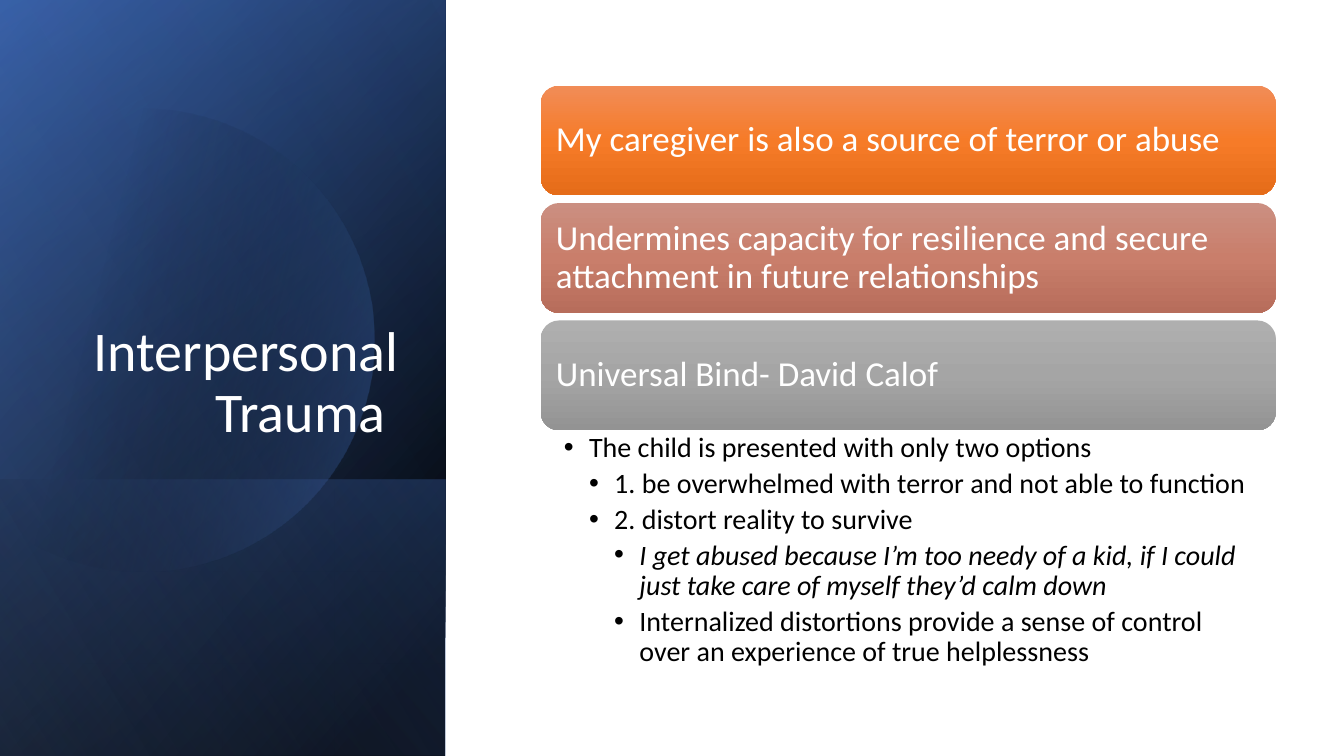
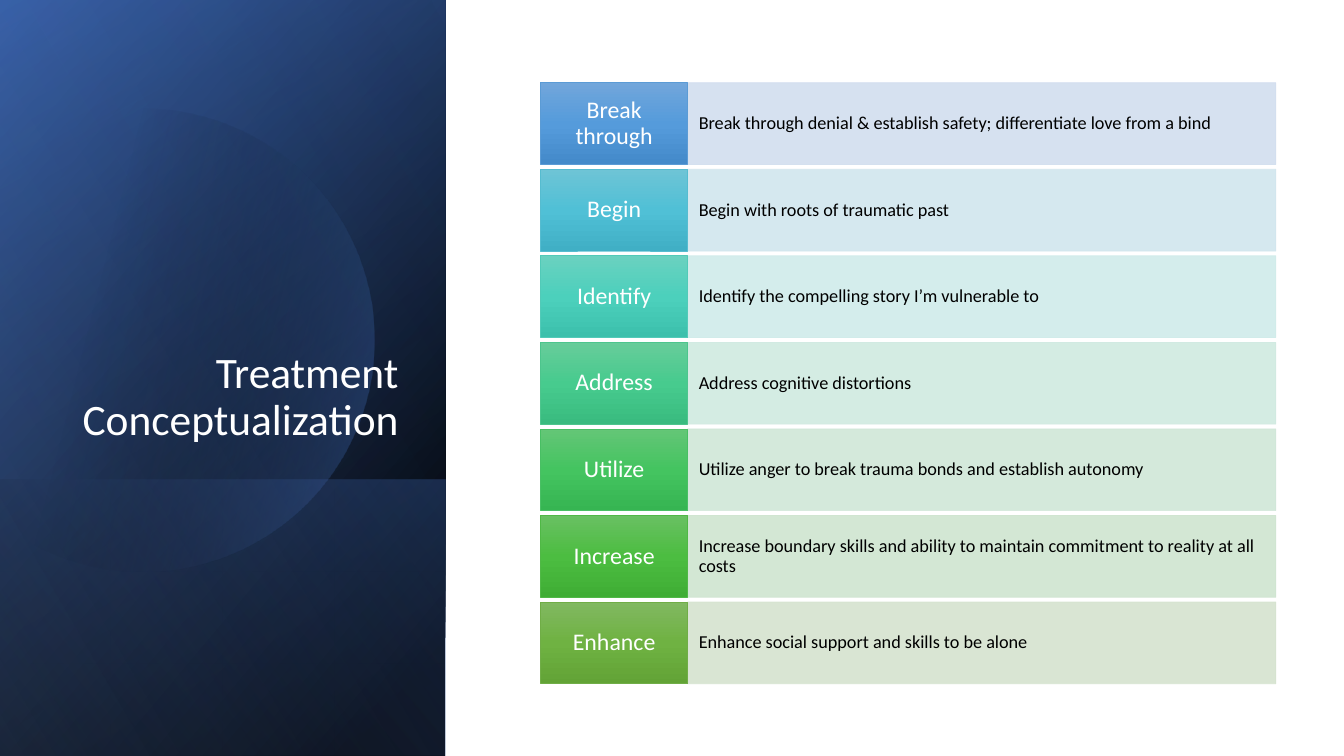
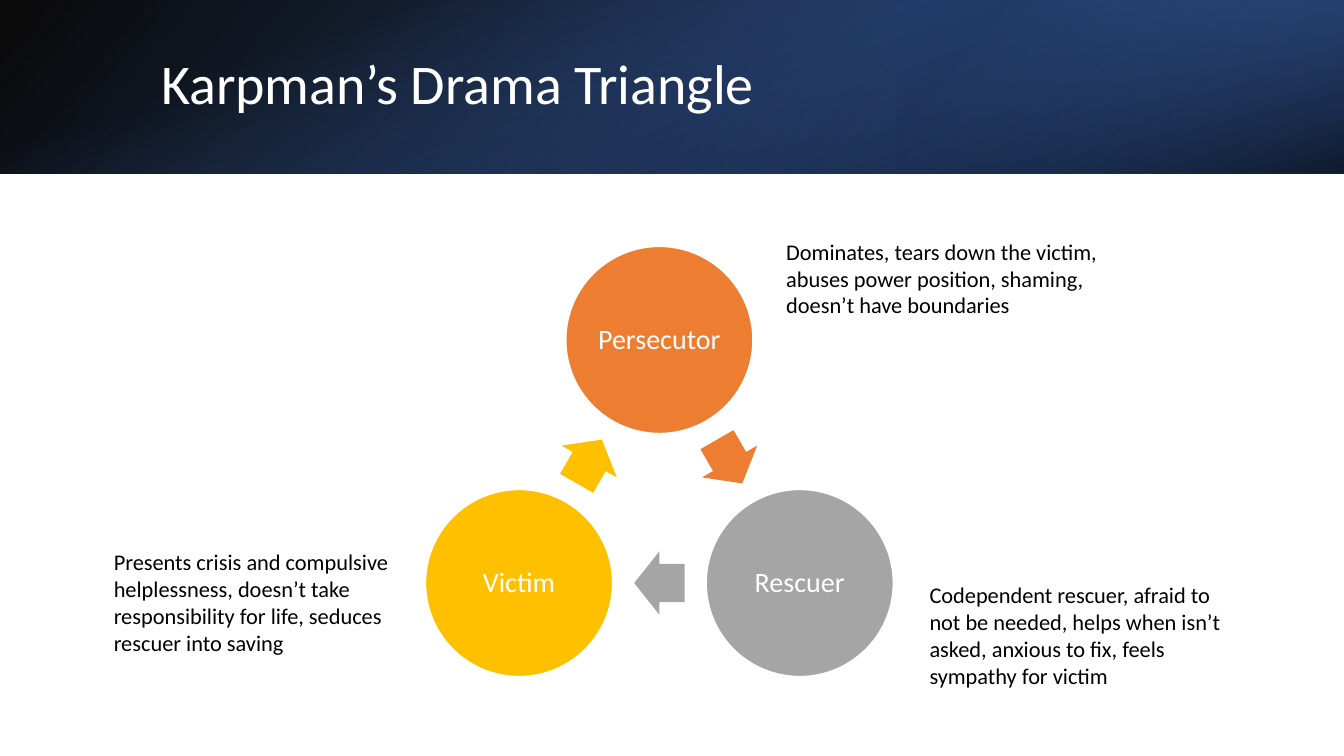
from dataclasses import dataclass
from math import acos, cos, radians, sin, sqrt

from lxml.etree import SubElement
from pptx import Presentation
from pptx.dml.color import RGBColor
from pptx.enum.shapes import MSO_SHAPE
from pptx.enum.text import MSO_ANCHOR, PP_ALIGN
from pptx.oxml.ns import qn
from pptx.util import Inches, Pt


@dataclass(frozen=True)
class Theme:
    font: str = "Calibri"
    black: str = "000000"
    white: str = "FFFFFF"
    blue: str = "4472C4"
    deep_blue: str = "2F5597"
    navy: str = "203864"
    pale_blue: str = "8FAADC"
    orange: str = "ED7D31"
    grey: str = "A5A5A5"
    gold: str = "FFC000"
    title: int = 40
    long_title: int = 31
    card: int = 25
    body: int = 20
    label: int = 17
    note: int = 16
    row: int = 13


@dataclass(frozen=True)
class Box:
    left: float
    top: float
    width: float
    height: float

    def inner(self, left, top, width, height):
        """Return an inner box given in percent of this one."""
        return Box(self.left + self.width * left / 100, self.top + self.height * top / 100,
                   self.width * width / 100, self.height * height / 100)

    def inches(self):
        return [Inches(n) for n in (self.left, self.top, self.width, self.height)]


THEME = Theme()
PAGE = Box(0, 0, 13.33, 7.5)
SIDE_PANEL = PAGE.inner(0, 0, 33.15, 100)
HEADER = PAGE.inner(0, 0, 100, 22.93)
WHOLE = (0, 0, 100, 100)

# Overlays: place in percent, rotation, flip, angle, stops (position, colour, opacity)
SIDE_LAYERS = [
    (WHOLE, 90, True, 50, [(8, THEME.black, 100), (100, THEME.deep_blue, 100)]),
    (WHOLE, 90, True, 30, [(0, THEME.black, 0), (99, THEME.blue, 46)]),
    ((0, 63.47, 100, 36.53), 90, True, 130, [(2, THEME.blue, 29), (100, THEME.black, 30)]),
]
SIDE_DISC = (14, [(29, THEME.black, 0), (100, THEME.blue, 43)])
SIDE_SHEEN = [(WHOLE, 90, True, 120, [(0, THEME.black, 0), (99, THEME.pale_blue, 11)])]
HEADER_LAYERS = [
    (WHOLE, 0, True, 140, [(0, THEME.black, 96), (100, THEME.deep_blue, 100)]),
    ((66.7, 0, 33.3, 100), 180, True, 320, [(19, THEME.navy, 68), (100, THEME.blue, 79)]),
    (WHOLE, 90, False, 340, [(23, THEME.blue, 0), (99, THEME.black, 74)]),
]

CARDS = [
    ("My caregiver is also a source of terror or abuse", ("F18C57", "F67B28", "E56C19")),
    ("Undermines capacity for resilience and secure attachment in future relationships",
     ("CB8F81", "C97E6B", "B76D5B")),
    ("Universal Bind- David Calof", ("AFAFAF", "A5A5A5", "939393")),
]
# Level, text, italic
BULLETS = [
    (1, "The child is presented with only two options", False),
    (2, "1. be overwhelmed with terror and not able to function", False),
    (2, "2. distort reality to survive", False),
    (3, "I get abused because I’m too needy of a kid, if I could just take care of myself "
        "they’d calm down", True),
    (3, "Internalized distortions provide a sense of control over an experience of true "
        "helplessness", False),
]
# Label, sentence, tint, edge, label gradient
STEPS = [
    ("Break through", "Break through denial & establish safety; differentiate love from a bind",
     "D2DEEF", "5B9BD5", ("71A6DB", "559BDB", "448ACA")),
    ("Begin", "Begin with roots of traumatic past",
     "D1E6EE", "56BCD0", ("6EC4D6", "50C0D6", "40AFC5")),
    ("Identify", "Identify the compelling story I’m vulnerable to",
     "D0ECEA", "52CAB8", ("6AD1C0", "4CD0BC", "3CC0AC")),
    ("Address", "Address cognitive distortions",
     "D0EAE1", "4DC58D", ("67CC9A", "47CB8E", "39BB7F")),
    ("Utilize", "Utilize anger to break trauma bonds and establish autonomy",
     "D0E7D8", "49BF64", ("64C677", "44C460", "36B552")),
    ("Increase", "Increase boundary skills and ability to maintain commitment to reality "
     "at all costs", "CFE5D0", "50B846", ("69C062", "4CBD41", "3FAD34")),
    ("Enhance", "Enhance social support and skills to be alone",
     "D5E3CF", "70AD47", ("81B861", "6FB242", "62A336")),
]
ROLES = [("Persecutor", THEME.orange), ("Rescuer", THEME.grey), ("Victim", THEME.gold)]
ROLE_NOTES = [
    ((57.76, 30.8, 25.96, 12.13),
     "Dominates, tears down the victim, abuses power position, shaming, "
     "doesn’t have boundaries"),
    ((68.42, 76.27, 24.08, 15.73),
     "Codependent rescuer, afraid to not be needed, helps when isn’t asked, "
     "anxious to fix, feels sympathy for victim"),
    ((7.73, 71.87, 22.28, 15.73),
     "Presents crisis and compulsive helplessness, doesn’t take responsibility for life, "
     "seduces rescuer into saving"),
]


# Fills and shapes
def set_alpha(fill, opacity):
    colour = fill._xPr.find(qn("a:solidFill"))[0]
    SubElement(colour, qn("a:alpha"), val=str(opacity * 1000))


def set_solid(fill, colour, opacity=100):
    fill.solid()
    fill.fore_color.rgb = RGBColor.from_string(colour)
    if opacity < 100:
        set_alpha(fill, opacity)


def set_gradient(shape, angle, stops):
    shape.fill.gradient()
    gradient = shape._element.spPr.find(qn("a:gradFill"))
    for child in list(gradient):
        gradient.remove(child)
    gradient.set("rotWithShape", "1")
    stop_list = SubElement(gradient, qn("a:gsLst"))
    for position, colour, opacity in stops:
        stop = SubElement(stop_list, qn("a:gs"), pos=str(position * 1000))
        value = SubElement(stop, qn("a:srgbClr"), val=colour)
        if opacity < 100:
            SubElement(value, qn("a:alpha"), val=str(opacity * 1000))
    SubElement(gradient, qn("a:lin"), ang=str(angle * 60000), scaled="0")


def set_glossy(shape, colours):
    set_gradient(shape, 90, [(n * 50, colour, 100) for n, colour in enumerate(colours)])


def set_line(shape, colour, width, opacity=100):
    set_solid(shape.line.fill, colour, opacity)
    shape.line.width = Pt(width)


def add_plain_shape(slide, kind, box):
    shape = slide.shapes.add_shape(kind, *box.inches())
    shape.shadow.inherit = False
    shape.line.fill.background()
    return shape


# Text
def set_frame(shape, anchor, insets):
    frame = shape.text_frame
    names = ("margin_left", "margin_top", "margin_right", "margin_bottom")
    settings = {name: Inches(inset) for name, inset in zip(names, insets)}
    for name, value in (settings | {"word_wrap": True, "vertical_anchor": anchor}).items():
        setattr(frame, name, value)
    return frame


def write(paragraph, text, size, colour, align=PP_ALIGN.LEFT, spacing=0.9, italic=False):
    paragraph.alignment = align
    paragraph.line_spacing = spacing
    run = paragraph.add_run()
    run.text = text
    font_format = {"name": THEME.font, "size": Pt(size), "italic": italic}
    for name, value in font_format.items():
        setattr(run.font, name, value)
    run.font.color.rgb = RGBColor.from_string(colour)


def fill_text(shape, text, size, colour, anchor=MSO_ANCHOR.MIDDLE,
              insets=(0.1, 0.05, 0.1, 0.05), **layout):
    frame = set_frame(shape, anchor, insets)
    write(frame.paragraphs[0], text, size, colour, **layout)


def add_text(slide, box, *content, **layout):
    fill_text(slide.shapes.add_textbox(*box.inches()), *content, **layout)


# Title regions
def add_layers(slide, region, layers):
    for place, rotation, flipped, angle, stops in layers:
        box = region.inner(*place)
        if rotation == 90:
            box = Box(box.left + (box.width - box.height) / 2,
                      box.top + (box.height - box.width) / 2, box.height, box.width)
        layer = add_plain_shape(slide, MSO_SHAPE.RECTANGLE, box)
        layer.rotation = rotation
        if flipped:
            layer._element.spPr.xfrm.set("flipH", "1")
        set_gradient(layer, angle, stops)


def add_cut_disc(slide, region):
    """Draw a disc that the left edge of the region cuts off."""
    radius = region.width * 0.52
    offset = region.width * 0.32
    middle = region.top + region.height * 0.45
    limit = acos(-offset / radius)
    steps = 120
    angles = [limit * (2 * n / steps - 1) for n in range(steps + 1)]
    points = [(Inches(region.left + offset + radius * cos(angle)),
               Inches(middle + radius * sin(angle))) for angle in angles]
    builder = slide.shapes.build_freeform(*points[0])
    builder.add_line_segments(points[1:], close=True)
    disc = builder.convert_to_shape()
    disc.shadow.inherit = False
    disc.line.fill.background()
    set_gradient(disc, *SIDE_DISC)


def add_side_title(slide, region, title, size):
    add_layers(slide, region, SIDE_LAYERS)
    add_cut_disc(slide, region)
    add_layers(slide, region, SIDE_SHEEN)
    add_text(slide, region.inner(14.48, 24.53, 77.15, 34.93), title, size, THEME.white,
             anchor=MSO_ANCHOR.BOTTOM, align=PP_ALIGN.RIGHT)


def add_header_title(slide, region, title):
    add_layers(slide, region, HEADER_LAYERS)
    add_text(slide, region.inner(11.25, 22.09, 82.37, 55.8), title, THEME.title, THEME.white)


# Content regions
def add_cards(slide, region):
    for number, (text, colours) in enumerate(CARDS):
        place = region.inner(0, number * 19.71, 100, 18.44)
        card = add_plain_shape(slide, MSO_SHAPE.ROUNDED_RECTANGLE, place)
        set_glossy(card, colours)
        fill_text(card, text, THEME.card, THEME.white, insets=(0.1,) * 4)


def add_bullets(slide, region):
    text_box = slide.shapes.add_textbox(*region.inches())
    frame = set_frame(text_box, MSO_ANCHOR.TOP, (0.23, 0.03, 0.19, 0.03))
    for number, (level, text, italic) in enumerate(BULLETS):
        paragraph = frame.add_paragraph() if number else frame.paragraphs[0]
        write(paragraph, text, THEME.body, THEME.black, italic=italic)
        paragraph.level = level
        paragraph.space_after = Pt(4)
        properties = paragraph._p.get_or_add_pPr()
        properties.set("marL", str(Inches(level * 0.25)))
        properties.set("indent", str(Inches(-0.25)))
        SubElement(properties, qn("a:buFont"), typeface="Arial")
        SubElement(properties, qn("a:buChar"), char="•")


def add_step_rows(slide, region):
    pitch = 14.4
    height = 100 - pitch * (len(STEPS) - 1)
    for number, (label, sentence, tint, edge, colours) in enumerate(STEPS):
        top = number * pitch
        row = add_plain_shape(slide, MSO_SHAPE.RECTANGLE, region.inner(20, top, 80, height))
        set_solid(row.fill, tint, 90)
        set_line(row, tint, 0.5, 90)
        fill_text(row, sentence, THEME.row, THEME.black, insets=(0.11, 0.21, 0.11, 0.21))
        tag = add_plain_shape(slide, MSO_SHAPE.RECTANGLE, region.inner(0, top, 20, height))
        set_glossy(tag, colours)
        set_line(tag, edge, 0.5)
        fill_text(tag, label, THEME.label, THEME.white, insets=(0.08,) * 4,
                  align=PP_ALIGN.CENTER)


def add_role_cycle(slide, region):
    diameter = region.width * 0.4
    orbit = (region.width - diameter) / sqrt(3)
    arrow_width, arrow_height = diameter * 0.27, diameter * 0.34
    centre_x = region.left + region.width / 2
    centre_y = region.top + diameter / 2 + orbit

    def around(degrees, distance, width, height):
        angle = radians(degrees)
        return Box(centre_x + distance * cos(angle) - width / 2,
                   centre_y + distance * sin(angle) - height / 2, width, height)

    for number, (role, colour) in enumerate(ROLES):
        turn = 120 * number
        circle = add_plain_shape(slide, MSO_SHAPE.OVAL,
                                 around(turn - 90, orbit, diameter, diameter))
        set_solid(circle.fill, colour)
        set_line(circle, THEME.white, 1)
        fill_text(circle, role, THEME.body, THEME.white, insets=(0.03,) * 4,
                  align=PP_ALIGN.CENTER)
        arrow = add_plain_shape(slide, MSO_SHAPE.RIGHT_ARROW,
                                around(turn - 30, orbit / 2, arrow_width, arrow_height))
        arrow.adjustments[0], arrow.adjustments[1] = 0.6, 0.5
        arrow.rotation = turn + 60
        set_solid(arrow.fill, colour)


def add_role_notes(slide, region):
    for place, text in ROLE_NOTES:
        add_text(slide, region.inner(*place), text, THEME.note, THEME.black,
                 anchor=MSO_ANCHOR.TOP, spacing=1.0)


# Slides
def build_trauma_slide(slide):
    add_side_title(slide, SIDE_PANEL, "Interpersonal Trauma ", THEME.title)
    content = PAGE.inner(40.23, 11.33, 54.7, 78.8)
    add_cards(slide, content)
    add_bullets(slide, content.inner(0, 57.87, 100, 42.13))


def build_treatment_slide(slide):
    add_side_title(slide, SIDE_PANEL, "Treatment Conceptualization", THEME.long_title)
    add_step_rows(slide, PAGE.inner(40.23, 10.95, 54.7, 79.5))


def build_triangle_slide(slide):
    add_header_title(slide, HEADER, "Karpman’s Drama Triangle")
    add_role_cycle(slide, PAGE.inner(31.66, 32.6, 34.81, 56.93))
    add_role_notes(slide, PAGE)


def main():
    presentation = Presentation()
    presentation.slide_width, presentation.slide_height = PAGE.inches()[2:]
    blank = presentation.slide_layouts[6]
    for build in (build_trauma_slide, build_treatment_slide, build_triangle_slide):
        build(presentation.slides.add_slide(blank))
    presentation.save("out.pptx")


if __name__ == "__main__":
    main()
